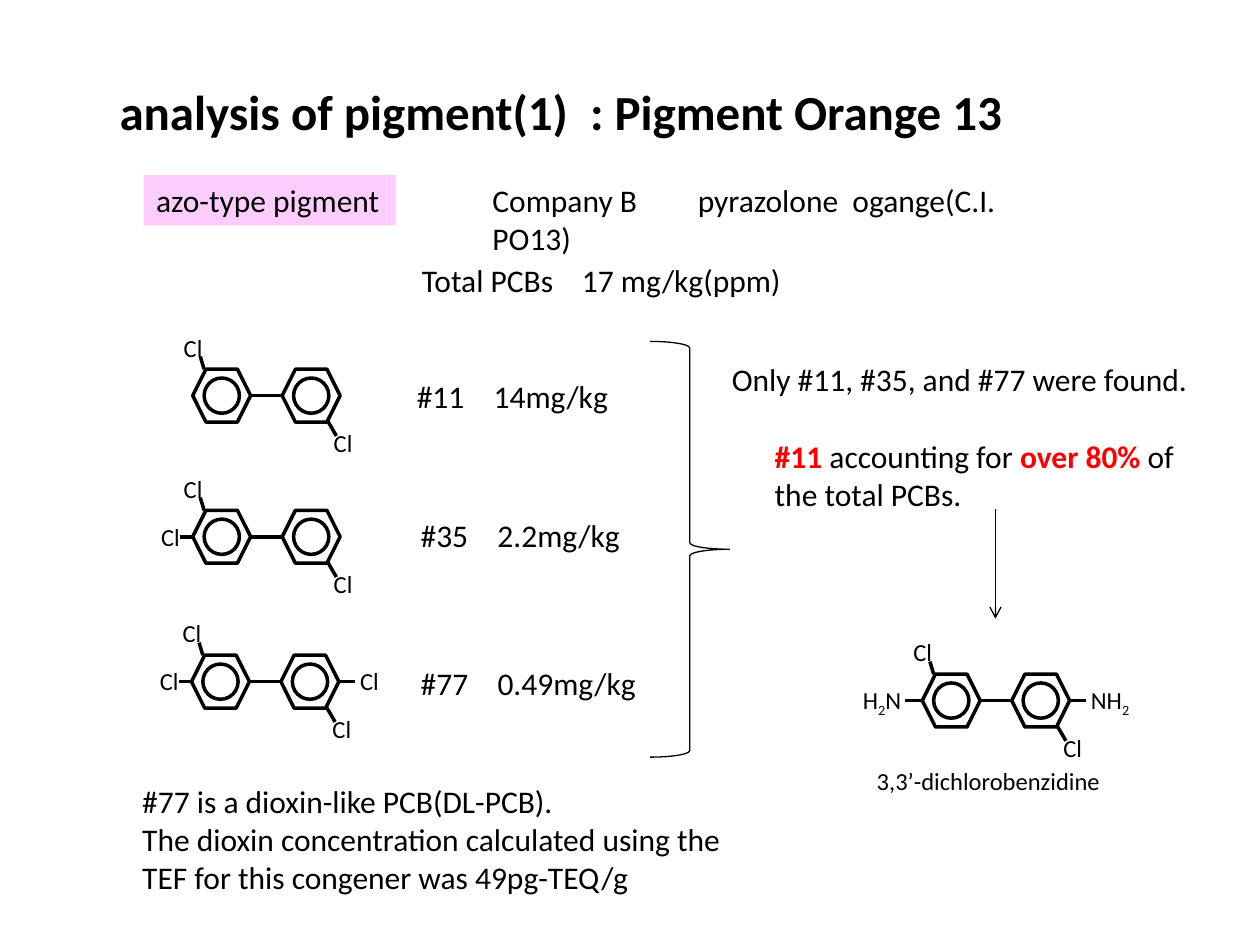
from lxml import etree
from pptx import Presentation
from pptx.dml.color import RGBColor
from pptx.enum.shapes import MSO_CONNECTOR, MSO_SHAPE
from pptx.enum.text import MSO_AUTO_SIZE, PP_ALIGN
from pptx.oxml.ns import qn
from pptx.util import Inches, Pt

HEXAGON, CIRCLE = MSO_SHAPE.HEXAGON, MSO_SHAPE.OVAL
BRACE, RECTANGLE = MSO_SHAPE.RIGHT_BRACE, MSO_SHAPE.RECTANGLE
STRAIGHT = MSO_CONNECTOR.STRAIGHT
FIT, LEFT = MSO_AUTO_SIZE.SHAPE_TO_FIT_TEXT, PP_ALIGN.LEFT
COLORS = {
    "ink": "000000",
    "highlight": "FF0000",
    "tag": "FFCCFF",
}
FONT = "Calibri"
PLAIN, BOLD, RED, SUB = "plain", "bold", "red", "sub"


def write(box, paragraphs, size=18, wrap=False, tab=None):
    """Fill a box; each paragraph is a list of (text, style) runs."""
    frame = box.text_frame
    frame.word_wrap = wrap
    frame.auto_size = FIT
    for index, runs in enumerate(paragraphs):
        paragraph = frame.paragraphs[0] if index == 0 else frame.add_paragraph()
        paragraph.alignment = LEFT
        if tab:
            tabs = etree.SubElement(paragraph._p.get_or_add_pPr(), qn("a:tabLst"))
            etree.SubElement(tabs, qn("a:tab"), pos=str(Inches(tab)), algn="l")
        for text, style in runs:
            run = paragraph.add_run()
            run.text = text
            run.font.name = FONT
            run.font.size = Pt(size)
            run.font.bold = style in (BOLD, RED)
            color = COLORS["highlight" if style == RED else "ink"]
            run.font.color.rgb = RGBColor.from_string(color)
            if style == SUB:
                run._r.get_or_add_rPr().set("baseline", "-25000")


def draw_line(shapes, x1, y1, x2, y2, width=2):
    line = shapes.add_connector(
        STRAIGHT, Inches(x1), Inches(y1), Inches(x2), Inches(y2))
    line.line.color.rgb = RGBColor.from_string(COLORS["ink"])
    line.line.width = Pt(width)
    etree.SubElement(line._element.spPr, qn("a:effectLst"))
    return line


prs = Presentation()
prs.slide_width, prs.slide_height = Inches(10), Inches(7.5)
slide = prs.slides.add_slide(prs.slide_layouts[6])

# Title
title = slide.shapes.add_textbox(Inches(0.85), Inches(0.6), Inches(8.09), Inches(0.57))
write(title, [[("analysis of pigment(1)  : Pigment Orange 13", BOLD)]], 28, wrap=True)

# Pigment type tag
tag = slide.shapes.add_shape(
    RECTANGLE, Inches(1.14), Inches(1.39), Inches(2), Inches(0.4))
tag.shadow.inherit = False
tag.fill.solid()
tag.fill.fore_color.rgb = RGBColor.from_string(COLORS["tag"])
tag.line.fill.background()
write(tag, [[("azo-type pigment", PLAIN)]])

# Sample and measured amounts: left, top, width, text, tab position, wrap
for left, top, width, text, tab, wrap in [
    (3.81, 1.39, 4.72, "Company B\tpyrazolone  ogange(C.I. PO13)", 1.63, True),
    (3.25, 2.02, 3.08, "Total PCBs\t17 mg/kg(ppm)", 1.27, False),
    (3.21, 2.94, 1.73, "#11\t14mg/kg", 0.61, False),
    (3.24, 4.05, 1.8, "#35\t2.2mg/kg", 0.61, False),
    (3.24, 5.22, 1.92, "#77\t0.49mg/kg", 0.61, False),
]:
    amount = slide.shapes.add_textbox(
        Inches(left), Inches(top), Inches(width), Inches(0.4))
    write(amount, [[(text, PLAIN)]], wrap=wrap, tab=tab)

# Molecules: corner of the left ring, then substituents on the left and right
CL = [("Cl", PLAIN)]
H2N = [("H", PLAIN), ("2", SUB), ("N", PLAIN)]
NH2 = [("NH", PLAIN), ("2", SUB)]
RING_GAP = 0.71
for x, y, left_label, right_label in [
    (1.53, 2.93, None, None),
    (1.53, 4.05, CL, None),
    (1.52, 5.2, CL, CL),
    (7.32, 5.35, H2N, NH2),
]:
    molecule = slide.shapes.add_group_shape().shapes
    middle = y + 0.21

    # Two aromatic rings
    for ring_x in (x, x + RING_GAP):
        for kind, left, top, width, height in [
            (HEXAGON, ring_x, y, 0.46, 0.42),
            (CIRCLE, ring_x + 0.09, y + 0.07, 0.28, 0.28),
        ]:
            ring = molecule.add_shape(
                kind, Inches(left), Inches(top), Inches(width), Inches(height))
            ring.shadow.inherit = False
            ring.fill.background()
            ring.line.color.rgb = RGBColor.from_string(COLORS["ink"])
            ring.line.width = Pt(2)

    # Bonds shared by all molecules
    draw_line(molecule, x + 0.46, middle, x + 0.72, middle)
    draw_line(molecule, x + 0.06, y - 0.1, x + 0.09, y)
    draw_line(molecule, x + 1.14, y + 0.53, x + 1.07, y + 0.41)

    # Substituents
    labels = [(x - 0.17, y - 0.34, 0.35, CL), (x + 1.02, y + 0.42, 0.35, CL)]
    if left_label:
        amine = left_label is H2N
        draw_line(molecule, x - (0.14 if amine else 0.1), middle, x, middle)
        labels.append((x - (0.57 if amine else 0.35), y + 0.04,
                       0.52 if amine else 0.35, left_label))
    if right_label:
        draw_line(molecule, x + 1.17, middle, x + 1.3, middle)
        labels.append((x + 1.24, y + 0.04,
                       0.52 if right_label is NH2 else 0.35, right_label))
    for left, top, width, runs in labels:
        label = molecule.add_textbox(
            Inches(left), Inches(top), Inches(width), Inches(0.34))
        write(label, [runs], 14)

# Brace gathering the congeners
brace = slide.shapes.add_shape(
    BRACE, Inches(5.16), Inches(2.71), Inches(0.63), Inches(3.3))
brace.shadow.inherit = False
brace.fill.background()
brace.line.color.rgb = RGBColor.from_string(COLORS["ink"])
brace.line.width = Pt(0.75)

# Findings
for left, top, width, height, paragraphs in [
    (5.71, 2.81, 3.94, 0.4, [[("Only #11, #35, and #77 were found.", PLAIN)]]),
    (6.05, 3.42, 3.62, 0.71, [[
        ("#11 ", RED), ("accounting for ", PLAIN),
        ("over 80% ", RED), ("of the total PCBs.", PLAIN)]]),
    (1.03, 6.16, 5.05, 1.01, [
        [("#77 is a dioxin-like PCB(DL-PCB).", PLAIN)],
        [("The dioxin concentration calculated using the TEF for this "
          "congener was 49pg-TEQ/g", PLAIN)]]),
]:
    finding = slide.shapes.add_textbox(
        Inches(left), Inches(top), Inches(width), Inches(height))
    write(finding, paragraphs, wrap=True)

# Arrow to the source compound and its name
arrow = draw_line(slide.shapes, 7.9, 4.04, 7.9, 4.91, 0.75)
etree.SubElement(arrow.line._get_or_add_ln(), qn("a:tailEnd"), type="arrow")
compound = slide.shapes.add_textbox(
    Inches(6.86), Inches(6.03), Inches(1.99), Inches(0.34))
write(compound, [[("3,3’-dichlorobenzidine", PLAIN)]], 14)

prs.save("out.pptx")
